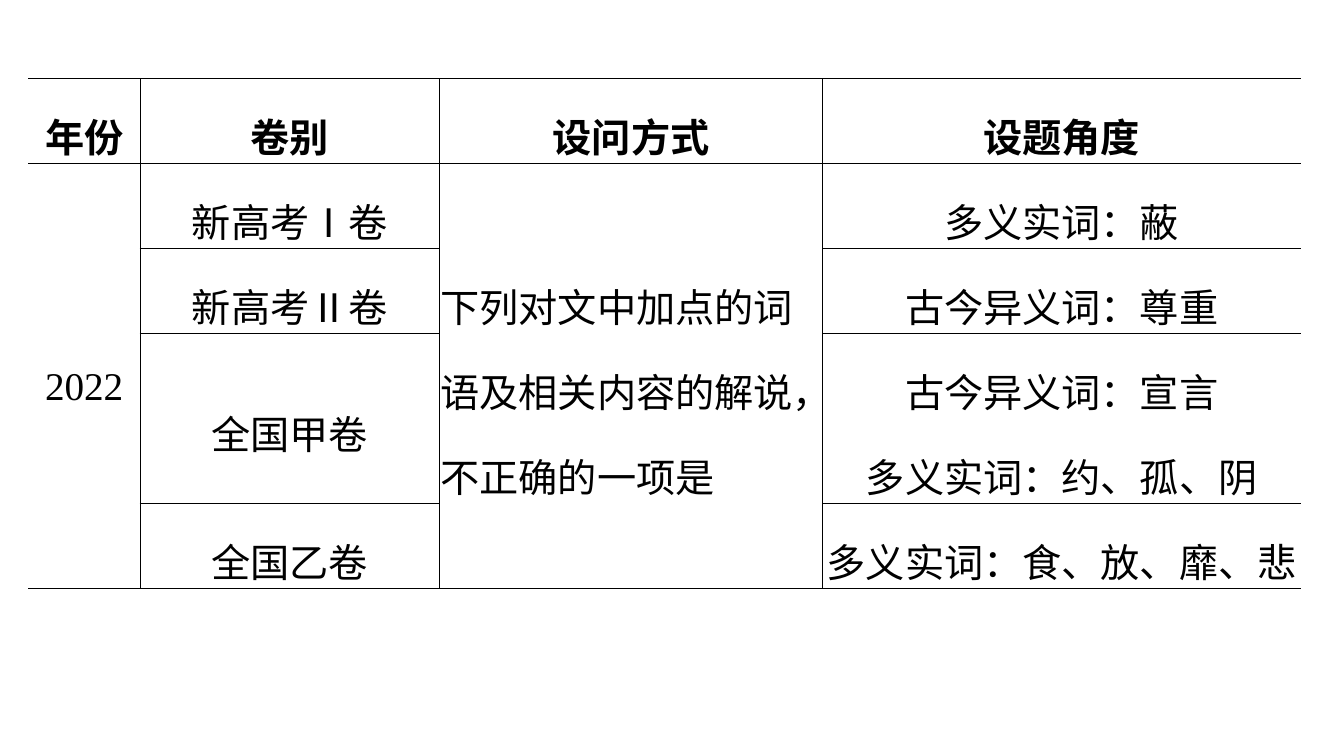
from dataclasses import dataclass

from lxml.etree import SubElement
from pptx import Presentation
from pptx.dml.color import RGBColor
from pptx.enum.text import MSO_ANCHOR, PP_ALIGN
from pptx.oxml.ns import qn
from pptx.util import Inches, Pt

HEADINGS = ["年份", "卷别", "设问方式", "设题角度"]
YEAR = "2022"
QUESTION = "下列对文中加点的词语及相关内容的解说，不正确的一项是"
PAPERS = [
    ("新高考Ⅰ卷", ["多义实词：蔽"]),
    ("新高考Ⅱ卷", ["古今异义词：尊重"]),
    ("全国甲卷", ["古今异义词：宣言", "多义实词：约、孤、阴"]),
    ("全国乙卷", ["多义实词：食、放、靡、悲"]),
]
YEAR_COLUMN, PAPER_COLUMN, QUESTION_COLUMN, ANGLE_COLUMN = range(4)
COLUMN_WIDTHS = [1.11, 2.97, 3.8, 4.74]
LINE_HEIGHT = 0.84
TABLE_LEFT, TABLE_TOP = 0.28, 0.78


@dataclass(frozen=True)
class Theme:
    ink: str = "000000"
    font: str = "Times New Roman"
    size: int = 28
    spacing: float = 1.5
    rule: int = 1


THEME = Theme()


def write(cell, lines, bold=False, align=PP_ALIGN.CENTER):
    cell.text = "\n".join(lines)
    for para in cell.text_frame.paragraphs:
        para.alignment = align
        para.line_spacing = THEME.spacing
        for span in para.runs:
            formats = {"name": THEME.font, "size": Pt(THEME.size), "bold": bold}
            for name, value in formats.items():
                setattr(span.font, name, value)
            span.font.color.rgb = RGBColor.from_string(THEME.ink)


def format_cell(cell, column):
    """Clear the fill and rule every edge except the table's outer sides."""
    side_margin = Inches(0.01 if column == QUESTION_COLUMN else 0)
    formats = {
        "vertical_anchor": MSO_ANCHOR.MIDDLE,
        "margin_left": side_margin,
        "margin_right": side_margin,
        "margin_top": 0,
        "margin_bottom": 0,
    }
    for name, value in formats.items():
        setattr(cell, name, value)
    edges = {
        "a:lnL": column > YEAR_COLUMN,
        "a:lnR": column < ANGLE_COLUMN,
        "a:lnT": True,
        "a:lnB": True,
    }
    properties = cell._tc.get_or_add_tcPr()
    for tag, ruled in edges.items():
        line = SubElement(properties, qn(tag), w=str(Pt(THEME.rule)))
        if ruled:
            fill = SubElement(line, qn("a:solidFill"))
            SubElement(fill, qn("a:srgbClr"), val=THEME.ink)
        else:
            SubElement(line, qn("a:noFill"))
    cell.fill.background()


def add_exam_table(page):
    line_counts = [1] + [len(angles) for _, angles in PAPERS]
    table = page.shapes.add_table(
        len(line_counts), len(HEADINGS),
        Inches(TABLE_LEFT), Inches(TABLE_TOP),
        Inches(sum(COLUMN_WIDTHS)), Inches(sum(line_counts) * LINE_HEIGHT),
    ).table
    table.first_row = table.horz_banding = False
    for column, width in zip(table.columns, COLUMN_WIDTHS):
        column.width = Inches(width)
    for row, count in zip(table.rows, line_counts):
        row.height = Inches(count * LINE_HEIGHT)
        for column, cell in enumerate(row.cells):
            format_cell(cell, column)

    for column in (YEAR_COLUMN, QUESTION_COLUMN):
        table.cell(1, column).merge(table.cell(len(PAPERS), column))
    for column, heading in enumerate(HEADINGS):
        write(table.cell(0, column), [heading], bold=True)
    write(table.cell(1, YEAR_COLUMN), [YEAR])
    write(table.cell(1, QUESTION_COLUMN), [QUESTION], align=PP_ALIGN.LEFT)
    for row, (paper, angles) in enumerate(PAPERS, start=1):
        write(table.cell(row, PAPER_COLUMN), [paper])
        write(table.cell(row, ANGLE_COLUMN), angles)


def main():
    deck = Presentation()
    deck.slide_width, deck.slide_height = Inches(13.33), Inches(7.5)
    page = deck.slides.add_slide(deck.slide_layouts[6])
    add_exam_table(page)
    deck.save("out.pptx")


if __name__ == "__main__":
    main()
